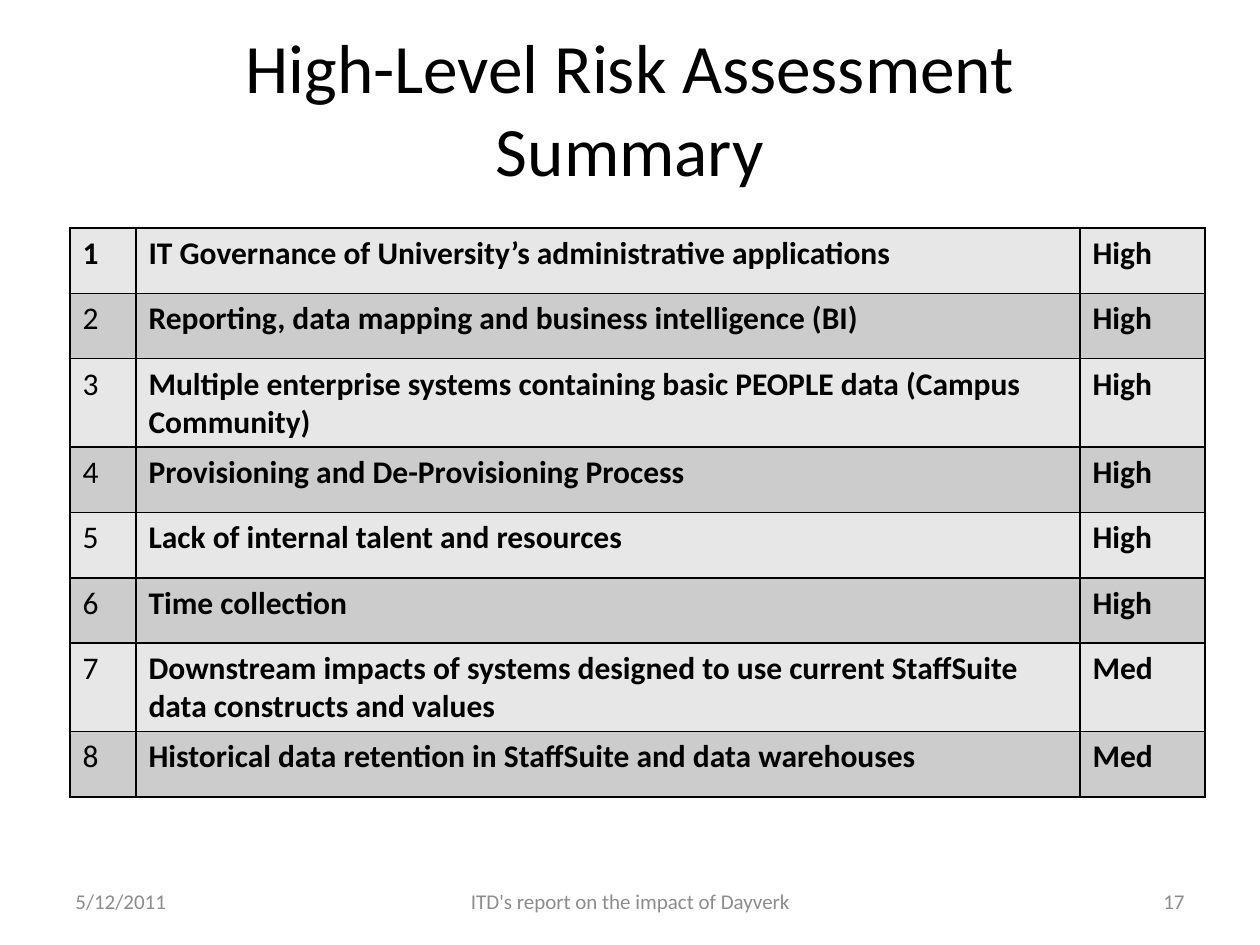
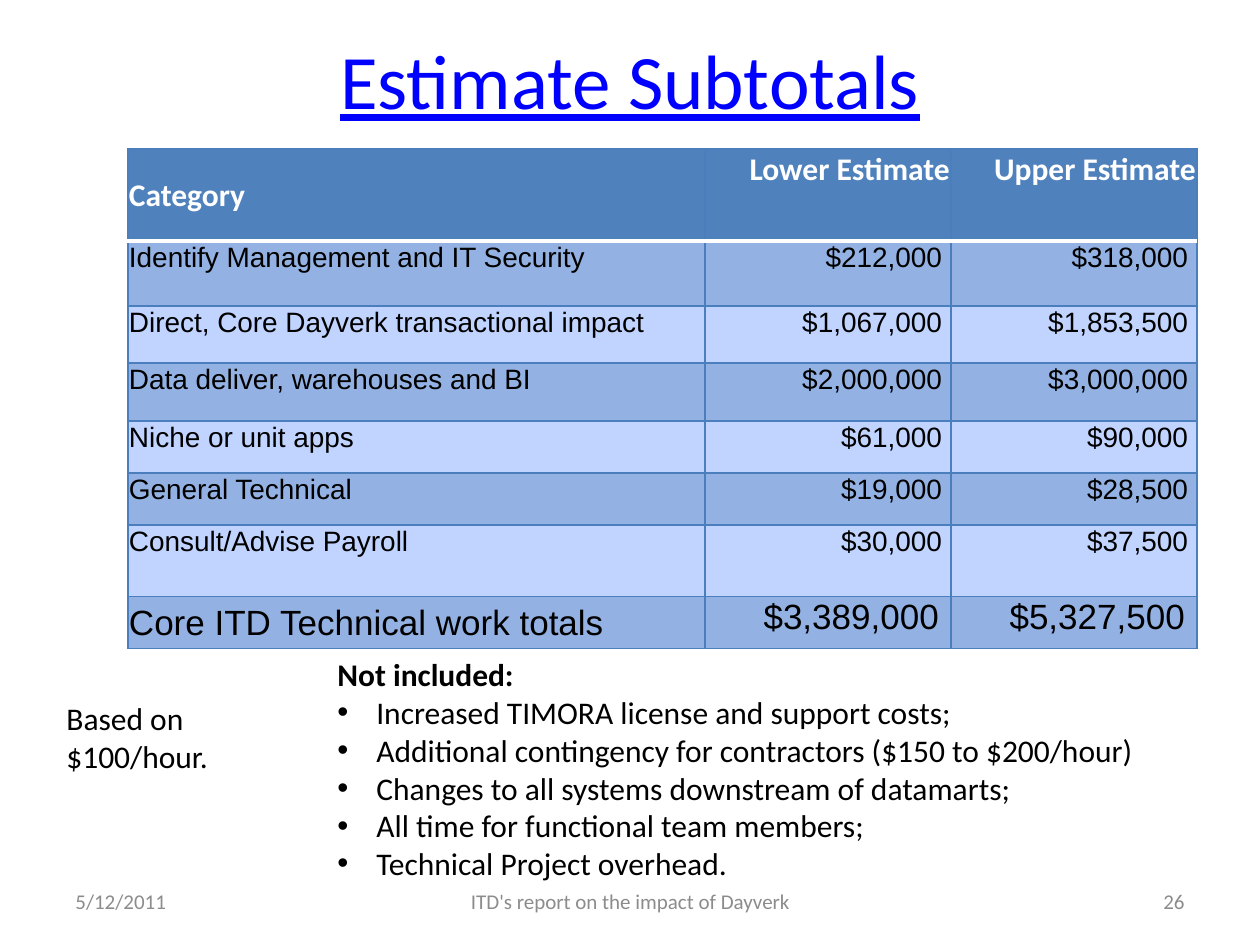
import pptx
import pptx.dml.color
import pptx.enum.text
import pptx.oxml
import pptx.oxml.ns
import pptx.util

PX = 914400 / 126
ALIGN = pptx.enum.text.PP_ALIGN
ANCHOR = pptx.enum.text.MSO_ANCHOR

BLACK, WHITE, GREY, LINK = "000000", "FFFFFF", "8C8C8C", "0000FF"
BODY = {"size": 18, "name": "Calibri", "color": BLACK, "bold": False}
STRONG = BODY | {"bold": True}
TITLE = BODY | {"size": 39.6}
FOOTER = BODY | {"size": 12, "color": GREY}
MONEY = BODY | {"size": 16, "name": "Arial"}
TOTAL = MONEY | {"size": 20}
HEADER = STRONG | {"color": WHITE}

RISK_BANDS = ("E7E7E7", "CCCCCC")
ESTIMATE_BANDS = ("93B2E3", "C0D4FF")
HEADER_FILL, ESTIMATE_LINE = "4F81BD", "4B7EBC"

RISKS = [
    ("IT Governance of University’s administrative applications", "High"),
    ("Reporting, data mapping and business intelligence (BI)", "High"),
    ("Multiple enterprise systems containing basic PEOPLE data (Campus Community)", "High"),
    ("Provisioning and De-Provisioning Process", "High"),
    ("Lack of internal talent and resources", "High"),
    ("Time collection", "High"),
    ("Downstream impacts of systems designed to use current StaffSuite data constructs and values", "Med"),
    ("Historical data retention in StaffSuite and data warehouses", "Med"),
]
ESTIMATES = [
    ("Category", "Lower Estimate", "Upper Estimate"),
    ("Identify Management and IT Security", "$212,000", "$318,000"),
    ("Direct, Core Dayverk transactional impact", "$1,067,000", "$1,853,500"),
    ("Data deliver, warehouses and BI", "$2,000,000", "$3,000,000"),
    ("Niche or unit apps", "$61,000", "$90,000"),
    ("General Technical", "$19,000", "$28,500"),
    ("Consult/Advise Payroll", "$30,000", "$37,500"),
    ("Core ITD Technical work totals", "$3,389,000", "$5,327,500"),
]
EXCLUDED = [
    "Increased TIMORA license and support costs;",
    "Additional contingency for contractors ($150 to $200/hour)",
    "Changes to all systems downstream of datamarts;",
    "All time for functional team members;",
    "Technical Project overhead.",
]


def px(n):
    return pptx.util.Emu(round(n * PX))


def rgb(color):
    return pptx.dml.color.RGBColor.from_string(color)


class Deck:
    def __init__(self):
        self.prs = pptx.Presentation()
        self.prs.slide_width, self.prs.slide_height = px(1260), px(945)
        self.s = None

    def slide(self, number):
        """Start a blank slide with its footer."""
        self.s = self.prs.slides.add_slide(self.prs.slide_layouts[6])
        for x, w, text, align in (
            (63, 294, "5/12/2011", ALIGN.LEFT),
            (431, 399, "ITD's report on the impact of Dayverk", ALIGN.CENTER),
            (903, 294, str(number), ALIGN.RIGHT),
        ):
            self.text((x, 876, w, 50), [text], FOOTER, align, ANCHOR.MIDDLE)

    def font(self, p, style):
        for r in p.runs:
            for key, value in style.items():
                if key == "color":
                    r.font.color.rgb = rgb(value)
                else:
                    setattr(r.font, key, pptx.util.Pt(value) if key == "size" else value)

    def text(self, box, lines, style, align=ALIGN.LEFT, anchor=ANCHOR.TOP, wrap=True):
        tf = self.s.shapes.add_textbox(*map(px, box)).text_frame
        tf.word_wrap, tf.vertical_anchor = wrap, anchor
        for i, line in enumerate(lines):
            p = tf.add_paragraph() if i else tf.paragraphs[0]
            p.alignment = align
            p.add_run().text = line
            self.font(p, style)
        return tf

    def title(self, y, lines, **changes):
        self.text((63, y, 1134, 158), lines, TITLE | changes, ALIGN.CENTER, ANCHOR.MIDDLE)

    def bullet(self, p):
        pPr = p._p.get_or_add_pPr()
        pPr.set("marL", str(px(39)))
        pPr.set("indent", str(px(-39)))
        ns = pptx.oxml.ns.nsdecls("a")
        pPr.append(pptx.oxml.parse_xml(f'<a:buFont {ns} typeface="Arial"/>'))
        pPr.append(pptx.oxml.parse_xml(f'<a:buChar {ns} char="•"/>'))

    def table(self, x, y, cols, rows):
        """Add a plain table with the given column widths and row heights."""
        frame = self.s.shapes.add_table(len(rows), len(cols), px(x), px(y), px(sum(cols)), px(sum(rows)))
        table = frame.table
        table.first_row = table.horz_banding = False
        for column, w in zip(table.columns, cols):
            column.width = px(w)
        for row, h in zip(table.rows, rows):
            row.height = px(h)
        return table

    def cell(self, cell, text, style, fill, borders, align=ALIGN.LEFT, **layout):
        """Fill a cell; borders maps each side, L R T B in order, to (colour, points)."""
        for key, value in layout.items():
            setattr(cell, key, value)
        cell.fill.solid()
        cell.fill.fore_color.rgb = rgb(fill)
        p = cell.text_frame.paragraphs[0]
        p.alignment = align
        p.add_run().text = text
        self.font(p, style)
        for i, (side, (color, points)) in enumerate(borders.items()):
            cell._tc.get_or_add_tcPr().insert(i, pptx.oxml.parse_xml(
                f'<a:ln{side} {pptx.oxml.ns.nsdecls("a")} w="{pptx.util.Pt(points)}">'
                f'<a:solidFill><a:srgbClr val="{color}"/></a:solidFill></a:ln{side}>'))


def risk_slide(deck):
    deck.slide(17)
    deck.title(28, ["High-Level Risk Assessment", "Summary"])
    table = deck.table(70, 228, (66, 944, 125), [65.4] * len(RISKS))
    borders = dict.fromkeys("LRTB", (BLACK, 1))
    for i, risk in enumerate(RISKS):
        for j, text in enumerate((str(i + 1), *risk)):
            style = STRONG if j or i == 0 else BODY
            deck.cell(table.cell(i, j), text, style, RISK_BANDS[i % 2], borders)


def estimate_slide(deck):
    deck.slide(26)
    deck.title(0, ["Estimate Subtotals"], size=44, color=LINK, underline=True)
    table = deck.table(128, 149, (577, 246, 246), (92, 65, 57, 58, 52, 52, 72, 52))
    last = len(ESTIMATES) - 1
    for i, row in enumerate(ESTIMATES):
        style = {0: HEADER, last: TOTAL}.get(i, MONEY)
        fill = ESTIMATE_BANDS[(i - 1) % 2] if i else HEADER_FILL
        borders = dict.fromkeys("LRTB", (ESTIMATE_LINE, 0.75))
        if i < 2:
            borders["T" if i else "B"] = (WHITE, 2)
        for j, text in enumerate(row):
            middle = j == 0 and i in (0, last)
            gap = {0: 1, last: 12}.get(i, 9) if j else 1
            deck.cell(table.cell(i, j), text, style, fill, borders,
                      ALIGN.RIGHT if j else ALIGN.LEFT,
                      vertical_anchor=ANCHOR.MIDDLE if middle else ANCHOR.TOP,
                      margin_left=px(1), margin_right=px(gap), margin_top=px(1), margin_bottom=0)

    tf = deck.text((325, 649, 871, 242), ["Not included:", *EXCLUDED], BODY)
    deck.font(tf.paragraphs[0], STRONG)
    for p in tf.paragraphs[1:]:
        deck.bullet(p)
    deck.text((54, 693, 171, 127), ["Based on", "$100/hour."], BODY, wrap=False)


def main():
    deck = Deck()
    risk_slide(deck)
    estimate_slide(deck)
    deck.prs.save("out.pptx")


if __name__ == "__main__":
    main()
